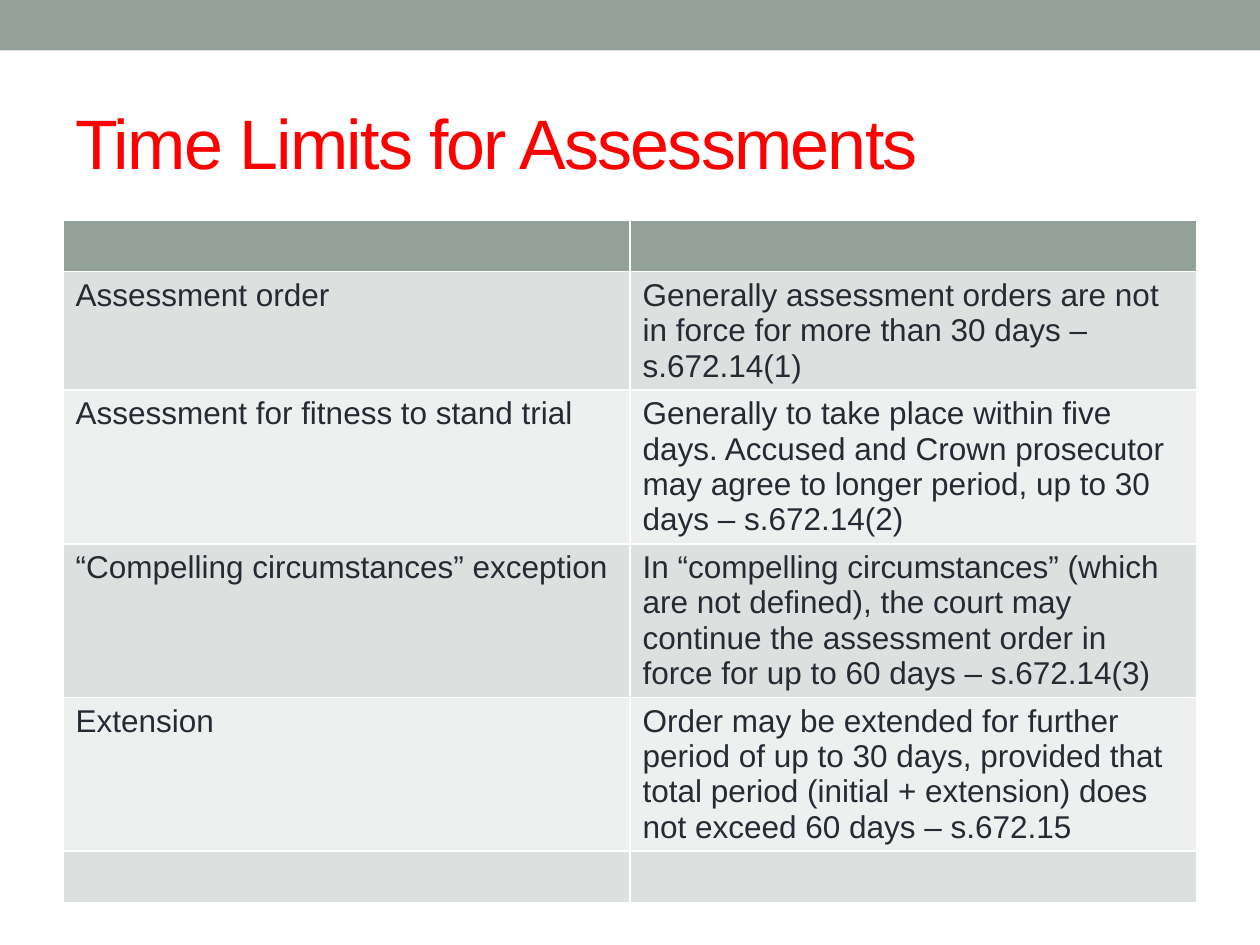
import pptx
import pptx.dml.color
import pptx.enum.shapes
import pptx.enum.text
import pptx.util

Pt = pptx.util.Pt
RGBColor = pptx.dml.color.RGBColor

SAGE = RGBColor(0x93, 0xA2, 0x99)
BAND_DARK = RGBColor(0xDC, 0xE0, 0xDE)
BAND_LIGHT = RGBColor(0xEE, 0xF0, 0xEF)
INK = RGBColor(0x29, 0x29, 0x34)
RED = RGBColor(0xFF, 0x00, 0x00)
FONT = "Arial"

TITLE_ONLY_LAYOUT = 5
ROW_HEIGHT = 29.2

# The header and the last row are empty
TIME_LIMITS = [
    ("", ""),
    ("Assessment order",
     "Generally assessment orders are not in force for more than 30 days – s.672.14(1)"),
    ("Assessment for fitness to stand trial",
     "Generally to take place within five days. Accused and Crown prosecutor may agree "
     "to longer period, up to 30 days – s.672.14(2)"),
    ("“Compelling circumstances” exception",
     "In “compelling circumstances” (which are not defined), the court may continue the "
     "assessment order in force for up to 60 days – s.672.14(3)"),
    ("Extension",
     "Order may be extended for further period of up to 30 days, provided that total "
     "period (initial + extension) does not exceed 60 days – s.672.15"),
    ("", ""),
]


def format_font(font, size, color):
    font.name = FONT
    font.size = Pt(size)
    font.color.rgb = color


def add_top_band(page, left, top, width, height):
    band = page.shapes.add_shape(
        pptx.enum.shapes.MSO_SHAPE.RECTANGLE, Pt(left), Pt(top), Pt(width), Pt(height))
    band.shadow.inherit = False
    band.fill.solid()
    band.fill.fore_color.rgb = SAGE
    band.line.fill.background()


def place_title(page, text, left, top, width, height):
    title = page.shapes.title
    title.left, title.top = Pt(left), Pt(top)
    title.width, title.height = Pt(width), Pt(height)
    frame = title.text_frame
    frame.text = text
    frame.word_wrap = True
    frame.auto_size = pptx.enum.text.MSO_AUTO_SIZE.NONE
    frame.vertical_anchor = pptx.enum.text.MSO_ANCHOR.MIDDLE
    para = frame.paragraphs[0]
    para.alignment = pptx.enum.text.PP_ALIGN.LEFT
    format_font(para.font, 40, RED)
    # Tighten the letter spacing by one point
    span = para.runs[0]
    span._r.get_or_add_rPr().set("spc", "-100")


def add_limits_table(page, rows, left, top, width):
    table = page.shapes.add_table(
        len(rows), len(rows[0]), Pt(left), Pt(top), Pt(width),
        Pt(ROW_HEIGHT * len(rows))).table
    for index, texts in enumerate(rows):
        # Rows grow to fit their text
        table.rows[index].height = Pt(ROW_HEIGHT)
        if index == 0:
            fill = SAGE
        else:
            fill = BAND_DARK if index % 2 else BAND_LIGHT
        for cell, text in zip(table.rows[index].cells, texts):
            cell.fill.solid()
            cell.fill.fore_color.rgb = fill
            cell.text = text
            format_font(cell.text_frame.paragraphs[0].font, 18, INK)


def main():
    deck = pptx.Presentation()
    deck.slide_width, deck.slide_height = Pt(720), Pt(540)
    page = deck.slides.add_slide(deck.slide_layouts[TITLE_ONLY_LAYOUT])
    add_top_band(page, 0, 0, 720, 28.8)
    place_title(page, "Time Limits for Assessments", 36, 42, 648, 78)
    add_limits_table(page, TIME_LIMITS, 36, 126, 648)
    deck.save("out.pptx")


if __name__ == "__main__":
    main()
